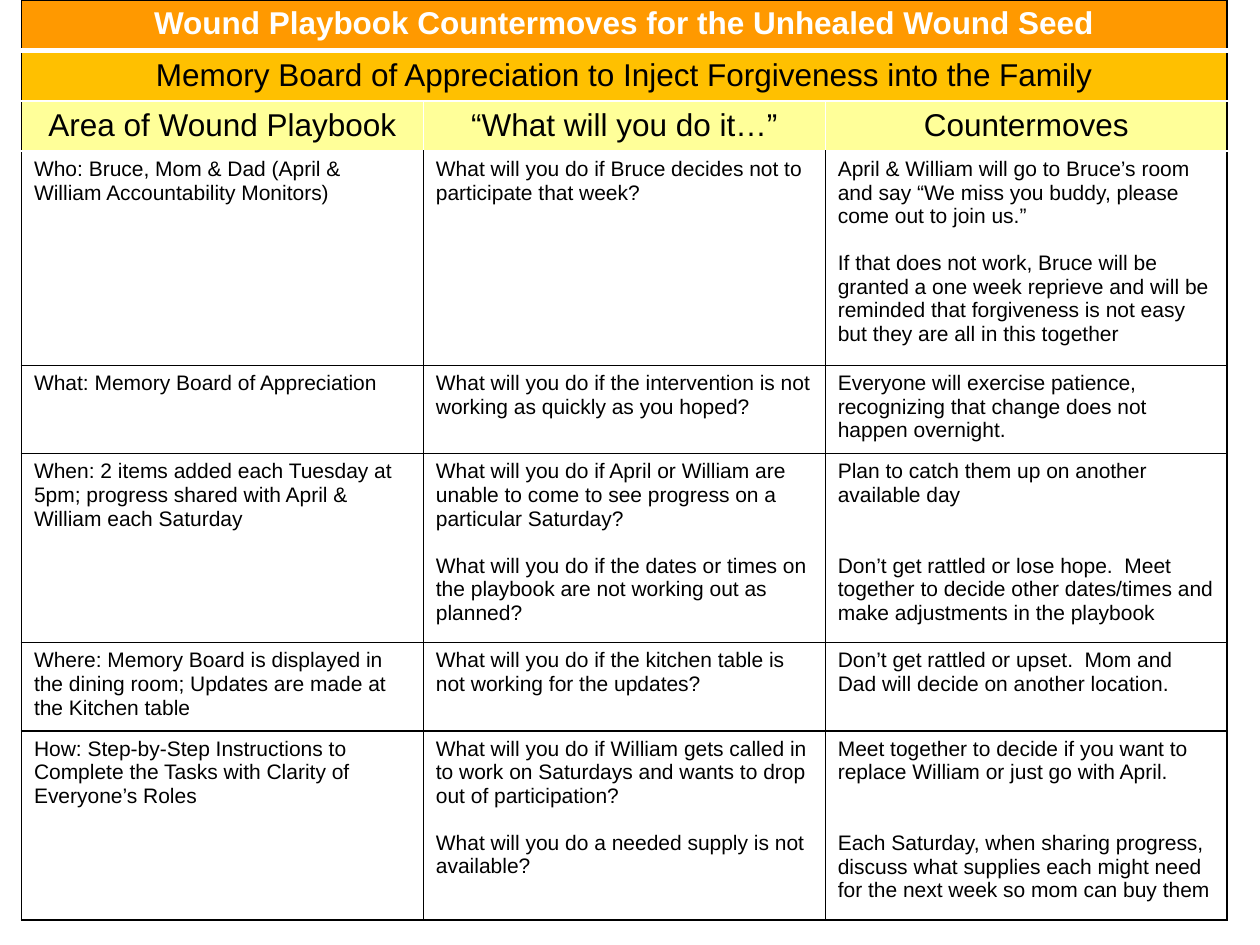
"""Build a slide with a table of wound playbook countermoves."""
from lxml.etree import SubElement
from pptx import Presentation
from pptx.dml.color import RGBColor
from pptx.enum.text import MSO_ANCHOR as Anchor, PP_ALIGN as Align
from pptx.oxml.ns import qn
from pptx.util import Inches, Pt


def color(value):
    """Return the colour for a hex string."""
    return RGBColor.from_string(value)


def add_border(cell, side, value, width):
    """Draw one side of a cell; side is L, R, T or B."""
    line = SubElement(cell._tc.get_or_add_tcPr(), qn(f"a:ln{side}"), w=str(Pt(width)))
    fill = SubElement(line, qn("a:solidFill"))
    SubElement(fill, qn("a:srgbClr"), val=value)


BLACK, WHITE = "000000", "FFFFFF"
LINE_HEIGHT = 13.5
HEADER_FILLS = ["FF9900", "FFC000", "FFFF99"]
ROW_HEIGHTS = [0.4, 0.4, 0.4, 1.7, 0.7, 1.5, 0.7, 1.5]
ROWS = [
    ["Wound Playbook Countermoves for the Unhealed Wound Seed"],
    ["Memory Board of Appreciation to Inject Forgiveness into the Family"],
    ["Area of Wound Playbook", "“What will you do it…”", "Countermoves"],
    ["Who: Bruce, Mom & Dad (April & William Accountability Monitors)",
     "What will you do if Bruce decides not to participate that week?",
     "April & William will go to Bruce’s room and say “We miss you buddy, please come out to join us.”\n"
     "If that does not work, Bruce will be granted a one week reprieve and will be reminded that "
     "forgiveness is not easy but they are all in this together"],
    ["What: Memory Board of Appreciation",
     "What will you do if the intervention is not working as quickly as you hoped?",
     "Everyone will exercise patience, recognizing that change does not happen overnight."],
    ["When: 2 items added each Tuesday at 5pm; progress shared with April & William each Saturday",
     "What will you do if April or William are unable to come to see progress on a particular Saturday?\n"
     "What will you do if the dates or times on the playbook are not working out as planned?",
     "Plan to catch them up on another available day\n"
     "Don’t get rattled or lose hope.  Meet together to decide other dates/times and make "
     "adjustments in the playbook"],
    ["Where: Memory Board is displayed in the dining room; Updates are made at the Kitchen table",
     "What will you do if the kitchen table is not working for the updates?",
     "Don’t get rattled or upset.  Mom and Dad will decide on another location."],
    ["How: Step-by-Step Instructions to Complete the Tasks with Clarity of Everyone’s Roles",
     "What will you do if William gets called in to work on Saturdays and wants to drop out of "
     "participation?\nWhat will you do a needed supply is not available?",
     "Meet together to decide if you want to replace William or just go with April.\n"
     "Each Saturday, when sharing progress, discuss what supplies each might need for the next "
     "week so mom can buy them"],
]
DOUBLE_GAPS = [(5, 2), (7, 2)]

presentation = Presentation()
presentation.slide_width, presentation.slide_height = Inches(10), Inches(7.5)
slide = presentation.slides.add_slide(presentation.slide_layouts[6])
table = slide.shapes.add_table(
    len(ROWS), 3, Inches(0.17), Inches(0), Inches(9.58), Inches(7.3)).table
table.first_row = table.horz_banding = False
for column in table.columns:
    column.width = Inches(3.19)

for row, texts in enumerate(ROWS):
    table.rows[row].height = Inches(ROW_HEIGHTS[row])
    is_header = row < len(HEADER_FILLS)
    if len(texts) == 1:
        table.cell(row, 0).merge(table.cell(row, 2))
    for column in range(3):
        cell = table.cell(row, column)
        inner = WHITE if row == 2 else BLACK
        add_border(cell, "L", inner if column > 0 else BLACK, 1)
        add_border(cell, "R", inner if column < 2 else BLACK, 1)
        add_border(cell, "T", WHITE if 1 <= row <= 3 else BLACK, 1)
        add_border(cell, "B", WHITE if is_header else BLACK, 3 if row == 0 else 1)
        cell.fill.solid()
        cell.fill.fore_color.rgb = color(HEADER_FILLS[row] if is_header else WHITE)
        cell.vertical_anchor = Anchor.MIDDLE if row in (1, 2) else Anchor.TOP
        if column >= len(texts):
            continue
        cell.text = texts[column]
        for index, paragraph in enumerate(cell.text_frame.paragraphs):
            paragraph.alignment = Align.CENTER if is_header else Align.LEFT
            paragraph.font.name = "Arial"
            paragraph.font.size = Pt(18 if is_header else 12)
            paragraph.font.bold = row == 0
            paragraph.font.color.rgb = color(WHITE if row == 0 else BLACK)
            if index > 0:
                gap_lines = 2 if (row, column) in DOUBLE_GAPS else 1
                paragraph.space_before = Pt(gap_lines * LINE_HEIGHT)

presentation.save("out.pptx")
